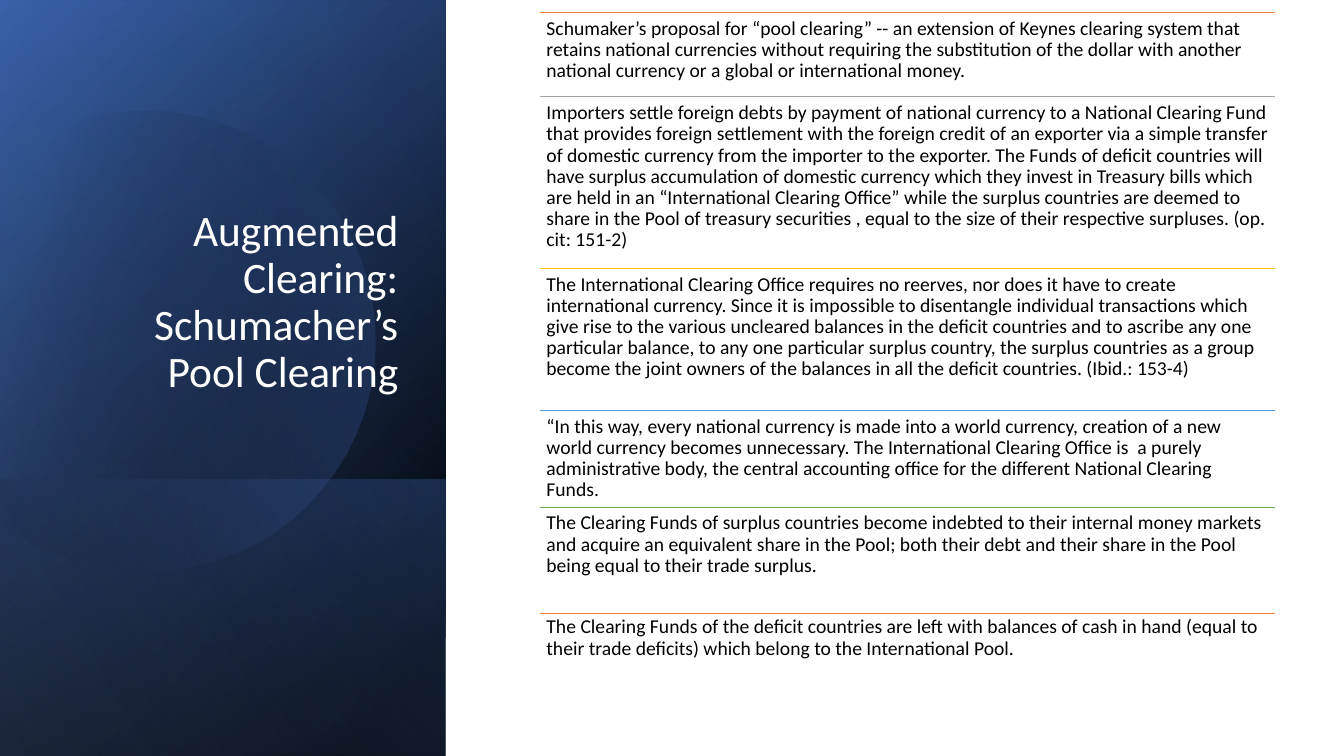
from math import cos, radians, sin

from pptx import Presentation
from pptx.dml.color import RGBColor
from pptx.enum.shapes import MSO_CONNECTOR as CONN, MSO_SHAPE as SHAPE
from pptx.enum.text import MSO_ANCHOR as ANCHOR, MSO_AUTO_SIZE as AUTO, PP_ALIGN as ALIGN
from pptx.oxml import parse_xml
from pptx.oxml.ns import nsdecls, qn
from pptx.util import Pt

PX = 9144
TITLE = "Augmented Clearing: Schumacher’s Pool Clearing"
SIDE_PANEL = (-154, 154, 750, 442)
PANELS = [
    (SIDE_PANEL, 50, [(8, "000000", 100), (100, "2F5597", 100)]),
    ((-154, 155, 750, 442), 30, [(0, "000000", 0), (99, "4472C4", 46)]),
    ((84, 392, 274, 442), 130, [(2, "4472C4", 29), (100, "000000", 30)]),
]
SHEEN = (SIDE_PANEL, 120, [(0, "000000", 0), (99, "8FAADC", 11)])
DISC_START = (149, 110)
DISC_CURVES = [
    [(246, 112), (335, 177), (363, 275)],
    [(398, 397), (328, 523), (207, 558)],
    [(131, 580), (53, 561), (-3, 514)],
    [(-15, 503)],
    [(-15, 175)],
    [(0, 161)],
    [(23, 142), (50, 128), (80, 119)],
    [(103, 113), (126, 110), (149, 110)],
]
DISC_CENTER = (158.5, 334.5)
DISC_ANGLE = 343.9
DISC_STOPS = [(29, "000000", 0), (100, "4472C4", 43)]
POINTS = [
    ("ED7D31", 12, 12, 84, "Schumaker’s proposal for “pool clearing” -- an extension of Keynes clearing system that retains national currencies without requiring the substitution of the dollar with another national currency or a global or international money."),
    ("A5A5A5", 96, 96, 170, "Importers settle foreign debts by payment of national currency to a National Clearing Fund that provides foreign settlement with the foreign credit of an exporter via a simple transfer of domestic currency from the importer to the exporter. The Funds of deficit countries will have surplus accumulation of domestic currency which they invest in Treasury bills which are held in an “International Clearing Office” while the surplus countries are deemed to share in the Pool of treasury securities , equal to the size of their respective surpluses. (op. cit: 151-2)"),
    ("FFC000", 266, 266, 141, "The International Clearing Office requires no reerves, nor does it have to create international currency. Since it is impossible to disentangle individual transactions which give rise to the various uncleared balances in the deficit countries and to ascribe any one particular balance, to any one particular surplus country, the surplus countries as a group become the joint owners of the balances in all the deficit countries. (Ibid.: 153-4)"),
    ("5B9BD5", 407, 407, 96, "“In this way, every national currency is made into a world currency, creation of a new world currency becomes unnecessary. The International Clearing Office is  a purely administrative body, the central accounting office for the different National Clearing Funds."),
    ("70AD47", 503, 503, 106, "The Clearing Funds of surplus countries become indebted to their internal money markets and acquire an equivalent share in the Pool; both their debt and their share in the Pool being equal to their trade surplus."),
    ("ED7D31", 609, 606, 69, "The Clearing Funds of the deficit countries are left with balances of cash in hand (equal to their trade deficits) which belong to the International Pool."),
]


def px(*lengths):
    return [round(v * PX) for v in lengths]


def color(value):
    return RGBColor.from_string(value)


def bezier(a, b, c, d, steps=16):
    for i in range(1, steps + 1):
        t = i / steps
        u = 1 - t
        yield tuple(u**3 * e + 3 * u * u * t * f + 3 * u * t * t * g + t**3 * h
                    for e, f, g, h in zip(a, b, c, d))


def outline(start, curves):
    points = [start]
    for curve in curves:
        points += bezier(points[-1], *curve) if len(curve) == 3 else curve
    return points


def turn(point, center, degrees):
    a = radians(degrees)
    x, y = point[0] - center[0], point[1] - center[1]
    return center[0] + x * cos(a) - y * sin(a), center[1] + x * sin(a) + y * cos(a)


class SlideBuilder:
    """Holds the text style and the current slide."""

    font = "Calibri"

    def __init__(self, prs):
        self.s = prs.slides.add_slide(prs.slide_layouts[5])

    def gradient(self, sp, angle, stops):
        sp.shadow.inherit = False
        sp.line.fill.background()
        sp.fill.background()
        marks = "".join(
            f'<a:gs pos="{pos * 1000}"><a:srgbClr val="{value}">'
            f'<a:alpha val="{alpha * 1000}"/></a:srgbClr></a:gs>'
            for pos, value, alpha in stops)
        spPr = sp.element.spPr
        spPr.replace(spPr.find(qn("a:noFill")), parse_xml(
            f'<a:gradFill {nsdecls("a")} rotWithShape="1"><a:gsLst>{marks}</a:gsLst>'
            f'<a:lin ang="{angle * 60000}" scaled="0"/></a:gradFill>'))

    def panel(self, box, angle, stops):
        sp = self.s.shapes.add_shape(SHAPE.RECTANGLE, *px(*box))
        sp.rotation = 90
        sp.element.spPr.find(qn("a:xfrm")).set("flipH", "1")
        self.gradient(sp, angle, stops)

    def disc(self, points, center, rotation, angle, stops):
        flat = [px(*turn(point, center, -rotation)) for point in points]
        builder = self.s.shapes.build_freeform(*flat[0])
        builder.add_line_segments(flat[1:], close=True)
        sp = builder.convert_to_shape()
        sp.rotation = rotation
        self.gradient(sp, angle, stops)

    def set_text(self, sp, text, size, value, align, insets):
        tf = sp.text_frame
        tf.word_wrap = True
        tf.auto_size = AUTO.NONE
        tf.margin_left, tf.margin_top, tf.margin_right, tf.margin_bottom = px(*insets)
        p = tf.paragraphs[0]
        p.text = text
        p.alignment = align
        p.line_spacing = 0.9
        p.space_before = Pt(0)
        p.font.name, p.font.size = self.font, Pt(size)
        p.font.color.rgb = color(value)
        return tf

    def title(self, text, box):
        sp = self.s.shapes.title
        sp.left, sp.top, sp.width, sp.height = px(*box)
        tf = self.set_text(sp, text, 31, "FFFFFF", ALIGN.RIGHT, (10, 5, 10, 52))
        tf.vertical_anchor = ANCHOR.BOTTOM
        sp.element.getparent().append(sp.element)

    def rule(self, shapes, left, right, y, value):
        line = shapes.add_connector(CONN.STRAIGHT, *px(left, y, right, y))
        line.line.color.rgb = color(value)
        line.line.width = Pt(0.5)
        line.element.spPr.append(parse_xml(f'<a:effectLst {nsdecls("a")}/>'))

    def ruled_list(self, points, left, width):
        shapes = self.s.shapes.add_group_shape().shapes
        for value, rule_y, top, height, text in points:
            self.rule(shapes, left, left + width, rule_y, value)
            sp = shapes.add_textbox(*px(left, top, width, height))
            tf = self.set_text(sp, text, 14, "000000", ALIGN.LEFT, (6, 6, 6, 6))
            tf.vertical_anchor = ANCHOR.TOP


def main():
    prs = Presentation()
    prs.slide_width, prs.slide_height = px(1333, 750)
    slide = SlideBuilder(prs)
    for panel in PANELS:
        slide.panel(*panel)
    slide.disc(outline(DISC_START, DISC_CURVES), DISC_CENTER, DISC_ANGLE, 30, DISC_STOPS)
    slide.panel(*SHEEN)
    slide.title(TITLE, (64, 147, 341, 299))
    slide.ruled_list(POINTS, 536, 729)
    prs.save("out.pptx")


if __name__ == "__main__":
    main()
